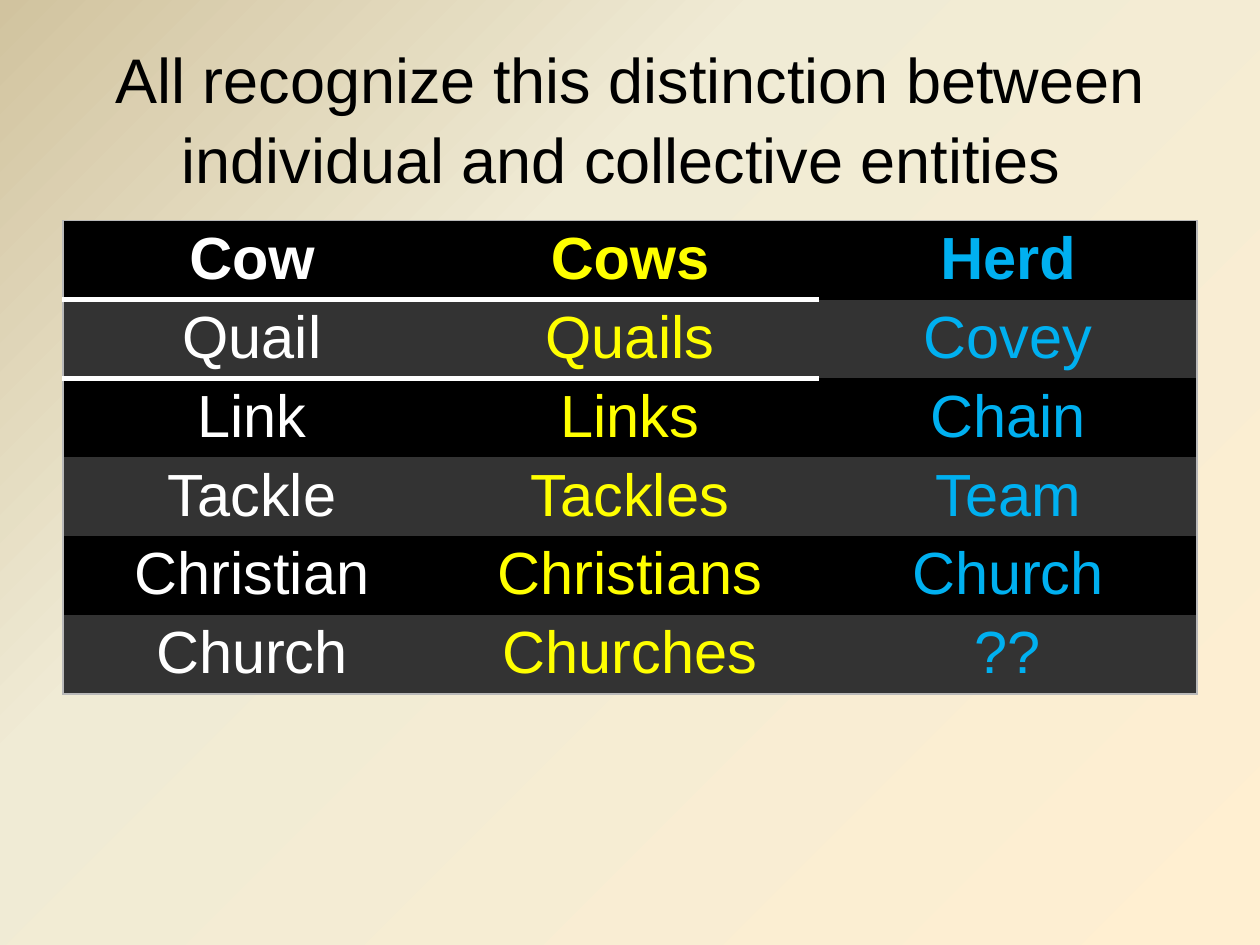
from dataclasses import dataclass

from lxml.etree import SubElement
from pptx import Presentation
from pptx.dml.color import RGBColor as RGB
from pptx.enum.text import MSO_ANCHOR as Anchor, PP_ALIGN as Align
from pptx.oxml import parse_xml
from pptx.oxml.ns import qn
from pptx.util import Cm, Pt


@dataclass(frozen=True)
class Theme:
    font: str = "Arial"
    title_size: int = 36
    cell_size: int = 34
    title_color: str = "000000"
    column_colors: tuple = ("FFFFFF", "FFFF00", "00B0F0")
    row_fills: tuple = ("000000", "333333")
    frame: str = "B9B9B9"
    rule: str = "FFFFFF"
    # Background stops: percent along the gradient, colour
    background: tuple = ((0, "D1C39F"), (35, "F0EBD5"), (100, "FFEFD1"))


NO_GRID_STYLE = "{2D5ABB26-0587-4C30-8999-92F81FD0307C}"
DRAWING_NS = "http://schemas.openxmlformats.org/drawingml/2006/main"

TITLE = "All recognize this distinction between individual and collective entities "
ROWS = [
    ("Cow", "Cows", "Herd"),
    ("Quail", "Quails", "Covey"),
    ("Link", "Links", "Chain"),
    ("Tackle", "Tackles", "Team"),
    ("Christian", "Christians", "Church"),
    ("Church", "Churches", "??"),
]


def write_text(frame, text, *, font, size, color, bold=False, spacing=None):
    """Fill a text frame with one centred, formatted paragraph."""
    para = frame.paragraphs[0]
    para.alignment = Align.CENTER
    para.line_spacing = spacing
    span = para.add_run()
    span.text = text
    span.font.name = font
    span.font.size = Pt(size)
    span.font.bold = bold
    span.font.color.rgb = RGB.from_string(color)


def set_borders(cell, borders):
    """Draw the given sides, as {side: (colour, points)}."""
    properties = cell._tc.get_or_add_tcPr()
    sides = [side for side in "LRTB" if side in borders]
    for index, side in enumerate(sides):
        color, width = borders[side]
        properties.insert(index, parse_xml(
            f'<a:ln{side} xmlns:a="{DRAWING_NS}" w="{Pt(width)}"><a:solidFill>'
            f'<a:srgbClr val="{color}"/></a:solidFill></a:ln{side}>'))


class SlideBuilder:
    def __init__(self, deck, theme):
        self.theme = theme
        self.page = deck.slides.add_slide(deck.slide_layouts[5])

    def background(self):
        fill = self.page.background.fill
        fill.gradient()
        fill.gradient_angle = 315
        stops = next(self.page._element.iter(qn("a:gsLst")))
        for stop in list(stops):
            stops.remove(stop)
        for percent, color in self.theme.background:
            stop = SubElement(stops, qn("a:gs"), pos=str(percent * 1000))
            SubElement(stop, qn("a:srgbClr"), val=color)

    def title(self, text, left, top, width, height):
        box = self.page.shapes.title
        box.left, box.top, box.width, box.height = left, top, width, height
        box.text_frame.word_wrap = True
        box.text_frame.vertical_anchor = Anchor.MIDDLE
        write_text(box.text_frame, text, font=self.theme.font,
                   size=self.theme.title_size, color=self.theme.title_color,
                   spacing=1.05)

    def table(self, rows, left, top, width, row_height):
        theme = self.theme
        last_row, last_column = len(rows) - 1, len(rows[0]) - 1
        grid = self.page.shapes.add_table(
            len(rows), len(rows[0]), left, top, width, row_height * len(rows)).table
        next(grid._tbl.iter(qn("a:tableStyleId"))).text = NO_GRID_STYLE

        for r, words in enumerate(rows):
            grid.rows[r].height = row_height
            for c, word in enumerate(words):
                cell = grid.cell(r, c)
                cell.margin_top = cell.margin_bottom = Cm(0.1)
                cell.fill.solid()
                cell.fill.fore_color.rgb = RGB.from_string(theme.row_fills[r % 2])
                write_text(cell.text_frame, word, font=theme.font,
                           size=theme.cell_size, color=theme.column_colors[c],
                           bold=r == 0)

                # Thin outer frame
                outer = {"L": c == 0, "R": c == last_column,
                         "T": r == 0, "B": r == last_row}
                borders = {side: (theme.frame, 0.75)
                           for side, shown in outer.items() if shown}
                # Header rule stops before the collective column
                if c < last_column and r < 2:
                    borders["B" if r == 0 else "T"] = (theme.rule, 3)
                set_borders(cell, borders)


def main():
    deck = Presentation()
    deck.slide_width, deck.slide_height = Cm(25.4), Cm(19.05)
    builder = SlideBuilder(deck, Theme())

    left, width = Cm(1.27), Cm(22.86)
    builder.background()
    builder.title(TITLE, left, Cm(0.76), width, Cm(3.18))
    builder.table(ROWS, left, Cm(4.45), width, Cm(1.59))
    deck.save("out.pptx")


if __name__ == "__main__":
    main()
